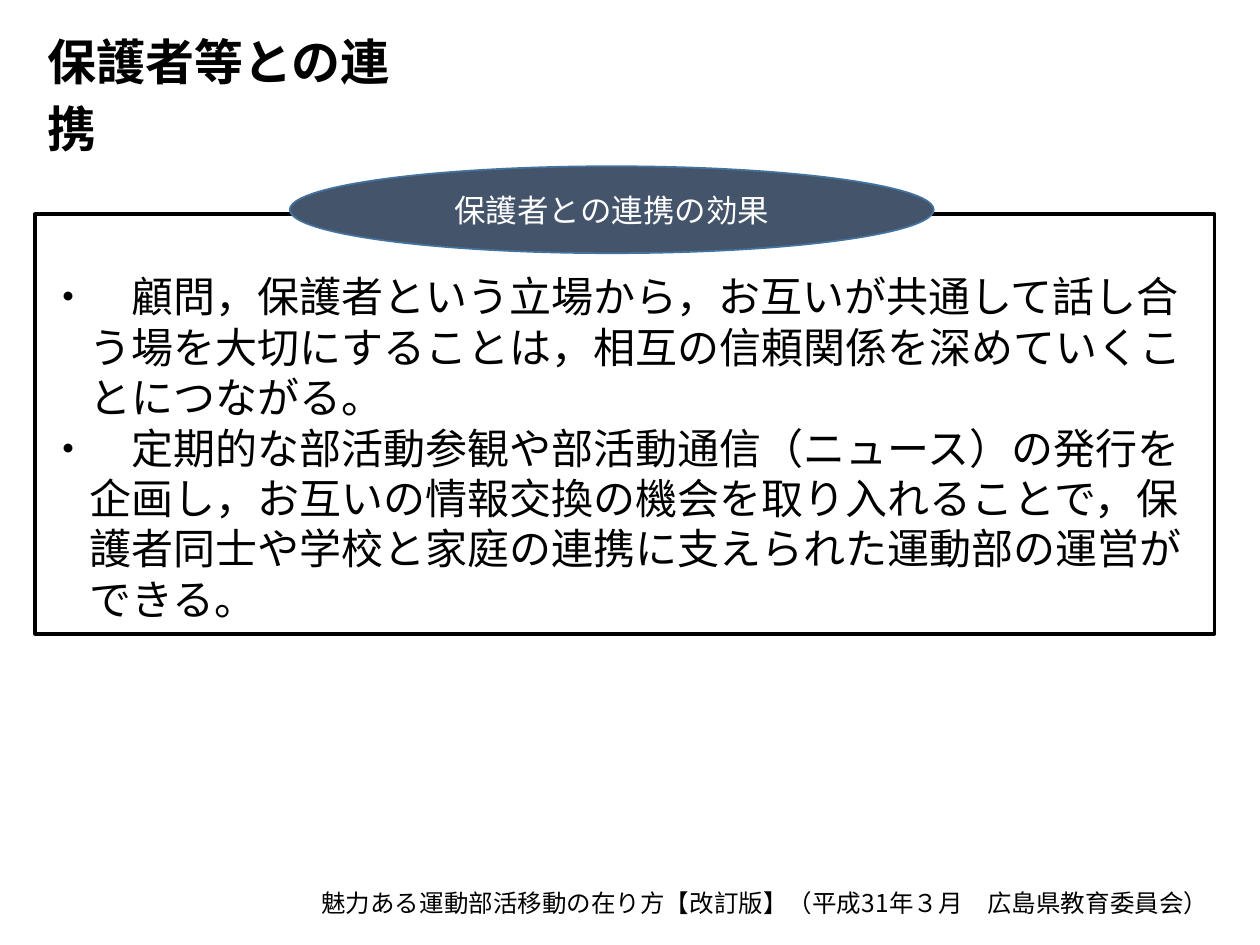
from pptx import Presentation
from pptx.dml.color import RGBColor
from pptx.enum import shapes, text
from pptx.oxml.ns import qn
from pptx.util import Pt
from lxml import etree

BLACK = RGBColor(0x00, 0x00, 0x00)
WHITE = RGBColor(0xFF, 0xFF, 0xFF)
SLATE = RGBColor(0x44, 0x54, 0x6A)
BLUE = RGBColor(0x43, 0x73, 0x9E)
JP = "Noto Sans CJK JP"


def write(sp, lines, size, color, align, anchor, font=JP, bold=False):
    tf = sp.text_frame
    tf.word_wrap = True
    tf.vertical_anchor = anchor
    tf.text = "\n".join(lines)
    for p in tf.paragraphs:
        p.alignment = align
        for r in p.runs:
            r.font.size = Pt(size)
            r.font.bold = bold
            r.font.color.rgb = color
            r.font.name = font
            ea = etree.SubElement(r.font._element, qn("a:ea"))
            ea.set("typeface", font)
    return tf


prs = Presentation()
prs.slide_width, prs.slide_height = Pt(720), Pt(540)
s = prs.slides.add_slide(prs.slide_layouts[6])

title = s.shapes.add_textbox(Pt(20), Pt(9.4), Pt(659.5), Pt(46))
tf = write(title, ["保護者等との連携"], 28, BLACK, text.PP_ALIGN.LEFT,
           text.MSO_ANCHOR.TOP, bold=True)
tf.margin_right = Pt(442)
tf.paragraphs[0].line_spacing = Pt(38.4)

box = s.shapes.add_shape(shapes.MSO_SHAPE.RECTANGLE, Pt(20), Pt(122.4), Pt(674), Pt(239.8))
box.shadow.inherit = False
box.fill.background()
box.line.color.rgb = BLACK
box.line.width = Pt(2)
effects = [
    "・\u3000顧問，保護者という立場から，お互いが共通して話し合う場を大切にすることは，相互の信頼関係を深めていくことにつながる。".replace("\u3000", "　"),
    "・　定期的な部活動参観や部活動通信（ニュース）の発行を企画し，お互いの情報交換の機会を取り入れることで，保護者同士や学校と家庭の連携に支えられた運動部の運営ができる。",
]
tf = write(box, effects, 24, BLACK, text.PP_ALIGN.LEFT, text.MSO_ANCHOR.TOP)
tf.margin_top = Pt(32.4)
for p in tf.paragraphs:
    pPr = p._p.get_or_add_pPr()
    pPr.set("marL", str(Pt(24)))
    pPr.set("indent", str(-Pt(24)))

heading = s.shapes.add_shape(shapes.MSO_SHAPE.OVAL, Pt(165.6), Pt(95), Pt(368), Pt(49.7))
heading.shadow.inherit = False
heading.fill.solid()
heading.fill.fore_color.rgb = SLATE
heading.line.color.rgb = BLUE
heading.line.width = Pt(1)
write(heading, ["保護者との連携の効果"], 18, WHITE, text.PP_ALIGN.CENTER,
      text.MSO_ANCHOR.MIDDLE, font="Calibri")

source = s.shapes.add_textbox(Pt(18.7), Pt(491.8), Pt(679), Pt(48.2))
write(source, ["魅力ある運動部活移動の在り方【改訂版】（平成31年３月　広島県教育委員会）"], 14, BLACK,
      text.PP_ALIGN.RIGHT, text.MSO_ANCHOR.MIDDLE)

prs.save("out.pptx")
